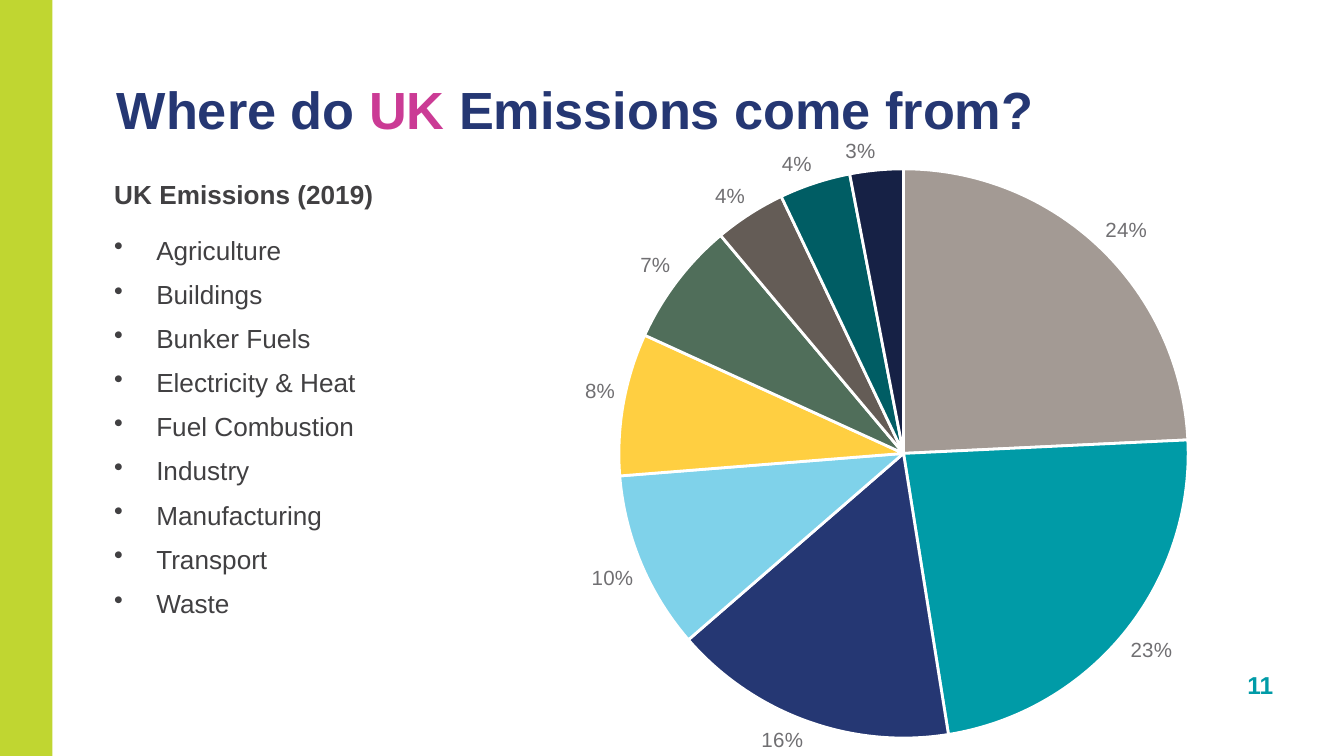
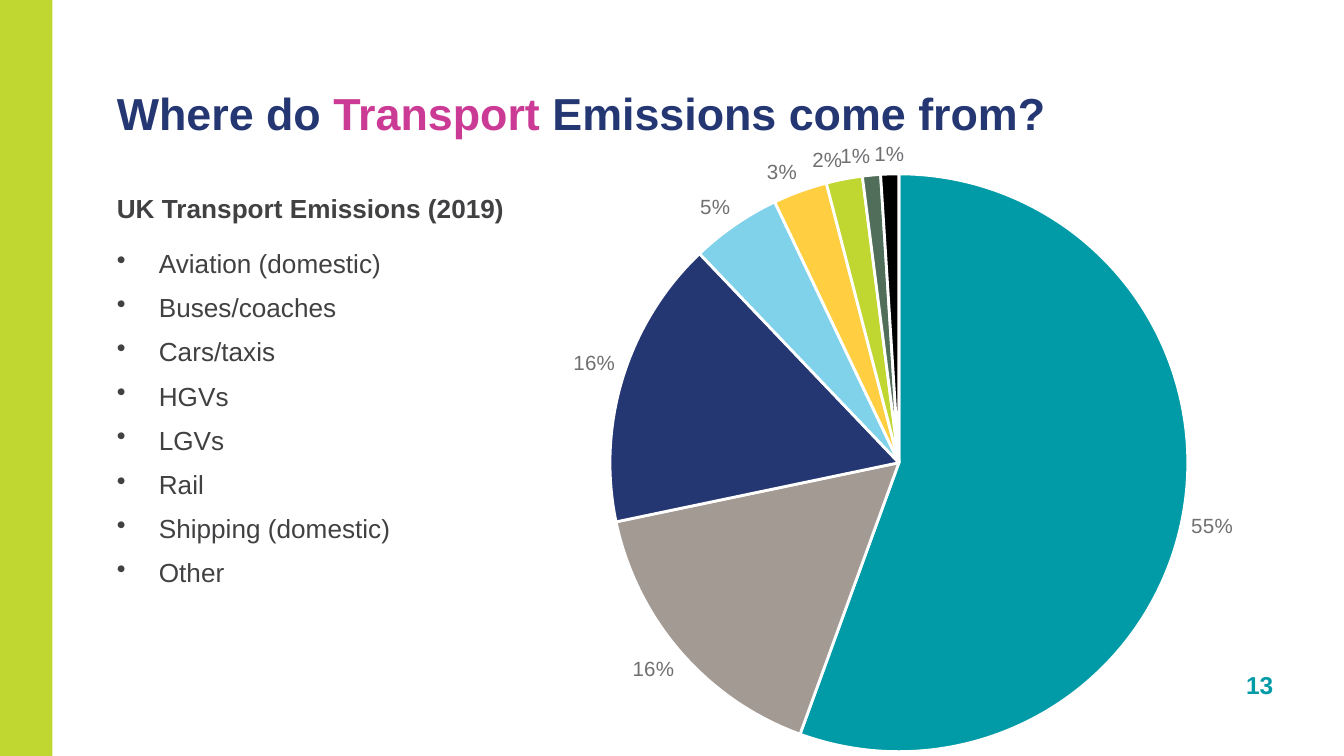
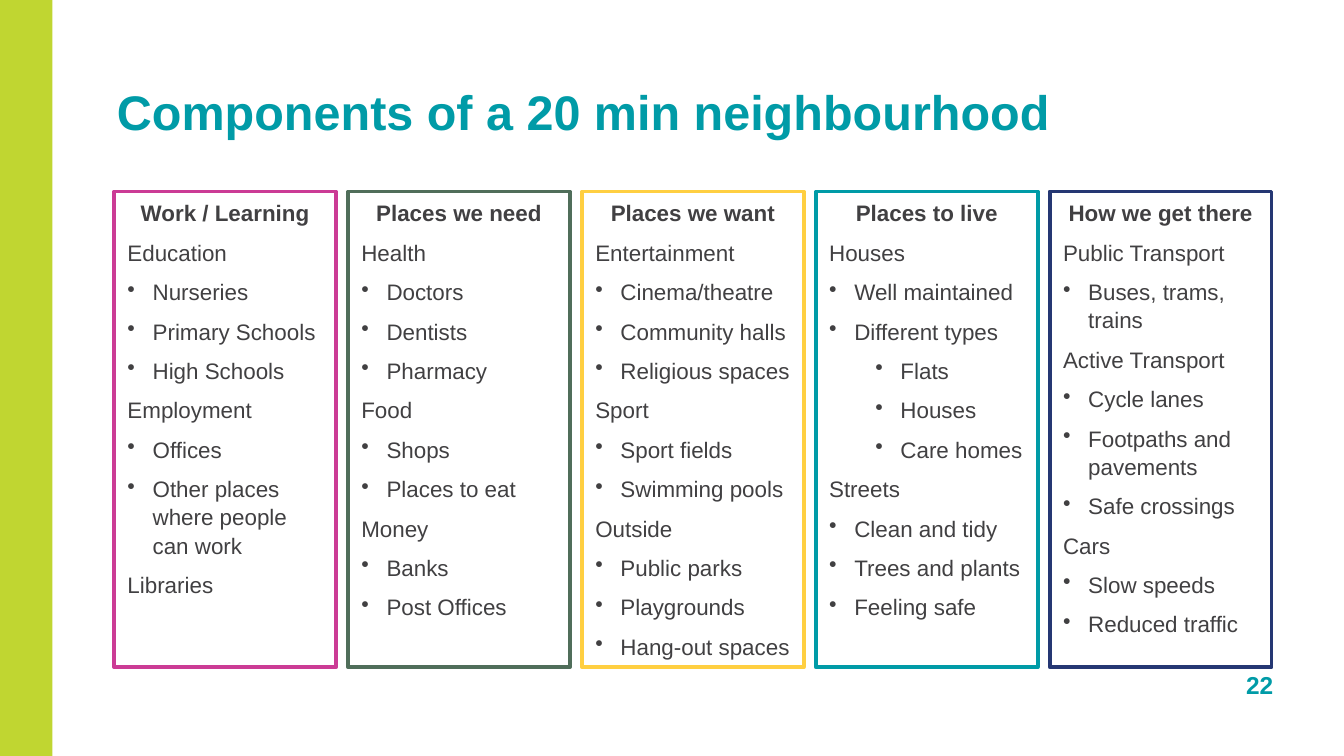
"""Build three slides on emissions and the 20 minute neighbourhood."""
from lxml import etree
from pptx import Presentation
from pptx.chart.data import CategoryChartData
from pptx.dml.color import RGBColor
from pptx.enum.chart import XL_CHART_TYPE, XL_LABEL_POSITION
from pptx.enum.shapes import MSO_SHAPE
from pptx.enum.text import MSO_ANCHOR, PP_ALIGN
from pptx.oxml.ns import qn
from pptx.util import Pt

PIE = XL_CHART_TYPE.PIE
OUTSIDE = XL_LABEL_POSITION.OUTSIDE_END
RECTANGLE = MSO_SHAPE.RECTANGLE
TOP, BOTTOM = MSO_ANCHOR.TOP, MSO_ANCHOR.BOTTOM
LEFT, CENTER, RIGHT = PP_ALIGN.LEFT, PP_ALIGN.CENTER, PP_ALIGN.RIGHT

FONT = "Arial"
LIME, TEAL, NAVY, PINK = "C0D631", "009BA7", "253773", "CB3B95"
STONE, SKY, YELLOW, MOSS = "A39A94", "7FD2EA", "FFCF41", "506E5A"
BROWN, PETROL, MIDNIGHT, BLACK = "645C56", "005D64", "162145", "000000"
TEXT, LABEL, WHITE = "414042", "706F72", "FFFFFF"

PIE_SLIDES = [
    {
        "number": "11",
        "title": [("Where do ", NAVY), ("UK", PINK), (" Emissions come from?", NAVY)],
        "title_size": 28,
        "heading": "UK Emissions (2019)",
        "items": ["Agriculture", "Buildings", "Bunker Fuels", "Electricity & Heat",
                  "Fuel Combustion", "Industry", "Manufacturing", "Transport", "Waste"],
        "list_box": (61.2, 95, 337.7, 231),
        "chart_box": (235.4, 64.1, 483.8, 353.5),
        "pie_box": (331.6, 90.5, 305),
        "values": [24, 23, 16, 10, 8, 7, 4, 4, 3],
        "colours": [STONE, TEAL, NAVY, SKY, YELLOW, MOSS, BROWN, PETROL, MIDNIGHT],
        "labels": {"show_percentage": True, "show_value": False},
    },
    {
        "number": "13",
        "title": [("Where do ", NAVY), ("Transport ", PINK), ("Emissions come from?", NAVY)],
        "title_size": 24,
        "heading": "UK Transport Emissions (2019)",
        "items": ["Aviation (domestic)", "Buses/coaches", "Cars/taxis", "HGVs", "LGVs",
                  "Rail", "Shipping (domestic)", "Other"],
        "list_box": (62.6, 102.2, 337.7, 231),
        "chart_box": (275, 66.2, 414.7, 347),
        "pie_box": (326.8, 93.2, 309.6),
        "values": [0.55, 0.16, 0.16, 0.05, 0.03, 0.02, 0.01, 0.01],
        "colours": [TEAL, STONE, NAVY, SKY, YELLOW, LIME, MOSS, BLACK],
        "labels": {"show_percentage": False, "show_value": True},
    },
]

COLUMN_SLIDE = {
    "number": "22",
    "title": [("Components of a 20 min neighbourhood", TEAL)],
    "title_size": 26,
    "columns": [
        ("Work / Learning", PINK, [
            (0, "Education"), (1, "Nurseries"), (1, "Primary Schools"),
            (1, "High Schools"), (0, "Employment"), (1, "Offices"),
            (1, "Other places where people can work"), (0, "Libraries")]),
        ("Places we need", MOSS, [
            (0, "Health"), (1, "Doctors"), (1, "Dentists"), (1, "Pharmacy"),
            (0, "Food"), (1, "Shops"), (1, "Places to eat"),
            (0, "Money"), (1, "Banks"), (1, "Post Offices")]),
        ("Places we want", YELLOW, [
            (0, "Entertainment"), (1, "Cinema/theatre"), (1, "Community halls"),
            (1, "Religious spaces"), (0, "Sport"), (1, "Sport fields"),
            (1, "Swimming pools"), (0, "Outside"), (1, "Public parks"),
            (1, "Playgrounds"), (1, "Hang-out spaces")]),
        ("Places to live", TEAL, [
            (0, "Houses"), (1, "Well maintained"), (1, "Different types"),
            (2, "Flats"), (2, "Houses"), (2, "Care homes"),
            (0, "Streets"), (1, "Clean and tidy"), (1, "Trees and plants"),
            (1, "Feeling safe")]),
        ("How we get there", NAVY, [
            (0, "Public Transport"), (1, "Buses, trams, trains"),
            (0, "Active Transport"), (1, "Cycle lanes"),
            (1, "Footpaths and pavements"), (1, "Safe crossings"),
            (0, "Cars"), (1, "Slow speeds"), (1, "Reduced traffic")]),
    ],
}

BAND_BOX = (-8.6, -2.9, 36.7, 411)
NUMBER_BOX = (632.2, 355, 56.9, 23)
TITLE_BOX = (62.6, 43.9, 541, 31)
COLUMN_LEFT, COLUMN_TOP, COLUMN_PITCH = 61.2, 102.6, 125.3
COLUMN_WIDTH, COLUMN_HEIGHT = 118.8, 254.9
LIST_INDENTS = [0, 22.5]
COLUMN_INDENTS = [0, 13.5, 38.2]


def colour(value):
    """Return the colour for a hex string."""
    return RGBColor.from_string(value)


def points(lengths):
    """Return the lengths as point values."""
    return [Pt(length) for length in lengths]


def set_font(font, size, tint, bold=False):
    """Apply the deck's font with a size, colour and weight."""
    for name, value in {"name": FONT, "size": Pt(size), "bold": bold}.items():
        setattr(font, name, value)
    font.color.rgb = colour(tint)


def prepare_frame(shape, anchor=TOP, inset=None):
    """Set wrapping, anchor and insets of a text frame."""
    frame = shape.text_frame
    frame.word_wrap = True
    frame.vertical_anchor = anchor
    if inset is not None:
        for side in ("left", "right", "top", "bottom"):
            setattr(frame, f"margin_{side}", Pt(inset))
    return frame


def add_text(page, place, spans, size, align=LEFT, inset=None):
    """Add a one-line bold text box anchored at its bottom."""
    frame = prepare_frame(page.shapes.add_textbox(*points(place)), BOTTOM, inset)
    para = frame.paragraphs[0]
    para.alignment = align
    for text, tint in spans:
        span = para.add_run()
        span.text = text
        set_font(span.font, size, tint, True)


def add_rectangle(page, place, fill, line=None):
    """Add a flat rectangle with an optional outline."""
    shape = page.shapes.add_shape(RECTANGLE, *points(place))
    shape.shadow.inherit = False
    shape.fill.solid()
    shape.fill.fore_color.rgb = colour(fill)
    if line:
        shape.line.color.rgb = colour(line)
        shape.line.width = Pt(2)
    else:
        shape.line.fill.background()
    return shape


def add_bullet(para, indent, hanging):
    """Give a paragraph a hanging bullet."""
    properties = para._p.get_or_add_pPr()
    properties.set("marL", str(Pt(indent)))
    properties.set("indent", str(-Pt(hanging)))
    etree.SubElement(properties, qn("a:buChar")).set("char", "•")


def fill_list(frame, heading, items, size, indents, heading_align=LEFT, heading_gap=6):
    """Write a bold heading followed by levelled items."""
    for index, (level, text) in enumerate([(0, heading), *items]):
        is_heading = index == 0
        para = frame.paragraphs[0] if is_heading else frame.add_paragraph()
        if level:
            add_bullet(para, indents[level], indents[1])
            para.level = level - 1
        formats = {
            "alignment": heading_align if is_heading else LEFT,
            "line_spacing": 1.05,
            "space_after": Pt(heading_gap if is_heading else 6),
        }
        for name, value in formats.items():
            setattr(para, name, value)
        span = para.add_run()
        span.text = text
        set_font(span.font, size, TEXT, is_heading)


def place_pie(chart, chart_box, pie_box):
    """Fix the pie's place inside its chart."""
    left, top, width, height = chart_box
    pie_left, pie_top, diameter = pie_box
    area = chart._chartSpace.chart.plotArea
    for layout in area.findall(qn("c:layout")):
        area.remove(layout)
    layout = etree.Element(qn("c:layout"))
    area.insert(0, layout)
    manual = etree.SubElement(layout, qn("c:manualLayout"))
    settings = {
        "layoutTarget": "inner", "xMode": "edge", "yMode": "edge",
        "x": (pie_left - left) / width, "y": (pie_top - top) / height,
        "w": diameter / width, "h": diameter / height,
    }
    for name, value in settings.items():
        etree.SubElement(manual, qn(f"c:{name}")).set("val", str(value))


def add_pie(page, content):
    """Add a pie chart with coloured slices and outside labels."""
    values = content["values"]
    data = CategoryChartData(number_format="General")
    data.categories = [str(index + 1) for index in range(len(values))]
    data.add_series("Series 1", values)
    chart = page.shapes.add_chart(PIE, *points(content["chart_box"]), data).chart
    chart.has_title = False
    chart.has_legend = False
    set_font(chart.font, 10, TEXT)
    plot = chart.plots[0]
    plot.vary_by_categories = True
    for index, tint in enumerate(content["colours"]):
        slice_format = plot.series[0].points[index].format
        slice_format.fill.solid()
        slice_format.fill.fore_color.rgb = colour(tint)
        slice_format.line.color.rgb = colour(WHITE)
        slice_format.line.width = Pt(1.5)
    plot.has_data_labels = True
    labels = plot.data_labels
    formats = {"number_format": "0%", "number_format_is_linked": False,
               "position": OUTSIDE, **content["labels"]}
    for name, value in formats.items():
        setattr(labels, name, value)
    set_font(labels.font, 11, LABEL)
    place_pie(chart, content["chart_box"], content["pie_box"])


def add_page(deck, content):
    """Add a page with the side band, page number and title."""
    page = deck.slides.add_slide(deck.slide_layouts[6])
    add_rectangle(page, BAND_BOX, LIME)
    add_text(page, NUMBER_BOX, [(content["number"], TEAL)], 13.1, RIGHT)
    add_text(page, TITLE_BOX, content["title"], content["title_size"], inset=0)
    return page


def add_pie_page(deck, content):
    """Add a page with a list beside a pie chart."""
    page = add_page(deck, content)
    add_pie(page, content)
    box = page.shapes.add_textbox(*points(content["list_box"]))
    items = [(1, item) for item in content["items"]]
    fill_list(prepare_frame(box, inset=0), content["heading"], items, 14,
              LIST_INDENTS, heading_gap=12)


def add_column_page(deck, content):
    """Add a page with a row of outlined columns."""
    page = add_page(deck, content)
    for index, (heading, tint, items) in enumerate(content["columns"]):
        left = COLUMN_LEFT + index * COLUMN_PITCH
        place = (left, COLUMN_TOP, COLUMN_WIDTH, COLUMN_HEIGHT)
        box = add_rectangle(page, place, WHITE, tint)
        fill_list(prepare_frame(box), heading, items, 12, COLUMN_INDENTS, CENTER)


def main():
    """Build and save the deck."""
    deck = Presentation()
    deck.slide_width, deck.slide_height = Pt(720), Pt(405)
    for content in PIE_SLIDES:
        add_pie_page(deck, content)
    add_column_page(deck, COLUMN_SLIDE)
    deck.save("out.pptx")


if __name__ == "__main__":
    main()
